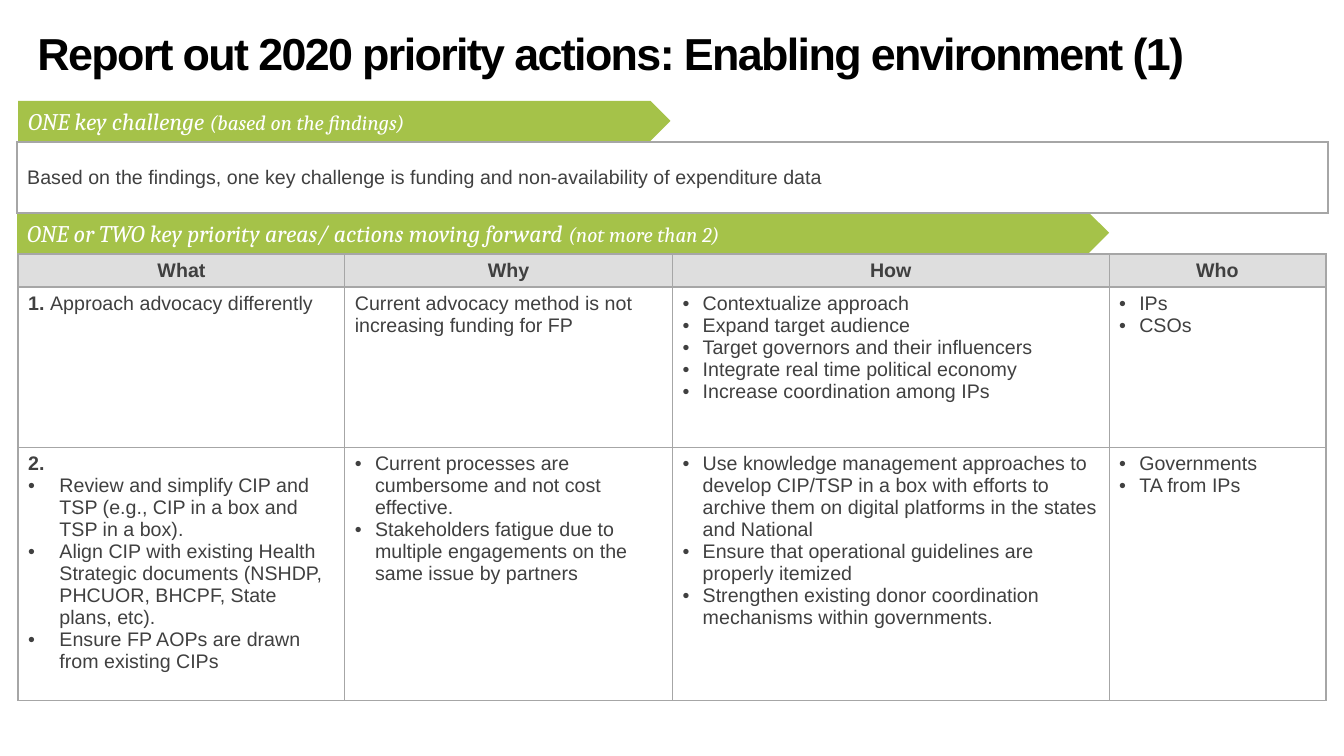
from dataclasses import dataclass

from lxml.etree import SubElement
from pptx import Presentation
from pptx.dml.color import RGBColor
from pptx.enum.shapes import MSO_SHAPE
from pptx.enum.text import MSO_ANCHOR, PP_ALIGN
from pptx.oxml.ns import qn
from pptx.util import Inches, Pt

COLORS = {"title": "000000", "text": "404040", "border": "A6A6A6",
          "header": "DEDEDE", "banner": "A5C249", "on_banner": "FFFFFF"}
THICK, THIN = 1.5, 0.75


@dataclass
class Line:
    """One paragraph: an optional bold lead, its text and a bullet indent."""
    text: str = ""
    lead: str = ""
    indent: float = 0


def bullets(*texts, indent=0.2):
    """Return bulleted lines that share one indent."""
    return [Line(text, indent=indent) for text in texts]


class ReportSlide:
    """Holds the style and the current slide and draws its elements."""

    def __init__(self, deck):
        self.slide = deck.slides.add_slide(deck.slide_layouts[5])

    def style(self, run, size, color="text", font="Arial", bold=False, italic=False):
        """Format one run."""
        run.font.size, run.font.name = Pt(size), font
        run.font.bold, run.font.italic = bold, italic
        run.font.color.rgb = RGBColor.from_string(COLORS[color])

    def title(self, text, left, top, width, height):
        """Place and format the title placeholder."""
        heading = self.slide.shapes.title
        heading.left, heading.top = Inches(left), Inches(top)
        heading.width, heading.height = Inches(width), Inches(height)
        frame = heading.text_frame
        frame.text = text
        frame.vertical_anchor = MSO_ANCHOR.MIDDLE
        paragraph = frame.paragraphs[0]
        paragraph.alignment, paragraph.line_spacing = PP_ALIGN.LEFT, 0.9
        self.style(paragraph.runs[0], 32, "title", bold=True)
        paragraph.runs[0].font._element.set("spc", "-120")

    def banner(self, heading, remark, left, top, width):
        """Draw a pointed banner with a heading and a smaller remark."""
        plate = self.slide.shapes.add_shape(
            MSO_SHAPE.PENTAGON, Inches(left), Inches(top), Inches(width), Inches(0.4))
        plate.shadow.inherit = False
        plate.fill.solid()
        plate.fill.fore_color.rgb = RGBColor.from_string(COLORS["banner"])
        plate.line.fill.background()
        plate.text_frame.vertical_anchor = MSO_ANCHOR.MIDDLE
        paragraph = plate.text_frame.paragraphs[0]
        paragraph.alignment = PP_ALIGN.LEFT
        for text, size in ((heading + " ", 17), (remark, 15)):
            run = paragraph.add_run()
            run.text = text
            self.style(run, size, "on_banner", "Cambria", italic=True)

    def table(self, left, top, widths, heights):
        """Add a plain table without a banded style."""
        grid = self.slide.shapes.add_table(
            len(heights), len(widths), Inches(left), Inches(top),
            Inches(sum(widths)), Inches(sum(heights))).table
        grid.first_row = grid.horz_banding = False
        for column, width in zip(grid.columns, widths):
            column.width = Inches(width)
        for row, height in zip(grid.rows, heights):
            row.height = Inches(height)
        return grid

    def cell(self, cell, lines, borders, header=False, middle=False):
        """Fill one cell; borders are left, right, top and bottom widths."""
        properties = cell._tc.get_or_add_tcPr()
        for side, width in zip("LRTB", borders):
            edge = SubElement(properties, qn(f"a:ln{side}"), w=str(Pt(width)))
            paint = SubElement(edge, qn("a:solidFill"))
            SubElement(paint, qn("a:srgbClr"), val=COLORS["border"])
        if header:
            cell.fill.solid()
            cell.fill.fore_color.rgb = RGBColor.from_string(COLORS["header"])
        else:
            cell.fill.background()
        cell.vertical_anchor = MSO_ANCHOR.MIDDLE if middle else MSO_ANCHOR.TOP
        for index, line in enumerate(lines):
            frame = cell.text_frame
            paragraph = frame.add_paragraph() if index else frame.paragraphs[0]
            paragraph.alignment = PP_ALIGN.CENTER if header else PP_ALIGN.LEFT
            for text, bold in ((line.lead, True), (line.text, False)):
                if text:
                    run = paragraph.add_run()
                    run.text = text
                    self.style(run, 14, bold=bold)
            if line.indent:
                layout = paragraph._p.get_or_add_pPr()
                layout.set("marL", str(Inches(line.indent)))
                layout.set("indent", str(-Inches(line.indent)))
                SubElement(layout, qn("a:buFont"), typeface="Arial")
                SubElement(layout, qn("a:buChar"), char="•")

    def action_table(self, rows, left, top, widths, heights):
        """Draw the table of actions with a heavier frame and header rule."""
        grid = self.table(left, top, widths, heights)
        last_row, last_column = len(heights) - 1, len(widths) - 1
        for r, row in enumerate(rows):
            for c, lines in enumerate(row):
                borders = (THICK if c == 0 else THIN,
                           THICK if c == last_column else THIN,
                           THICK if r <= 1 else THIN,
                           THICK if r in (0, last_row) else THIN)
                self.cell(grid.cell(r, c), lines, borders, header=r == 0, middle=r == 0)


def main():
    """Build the slide and save it."""
    deck = Presentation()
    deck.slide_width, deck.slide_height = Inches(13.33), Inches(7.5)
    report = ReportSlide(deck)
    report.title("Report out 2020 priority actions: Enabling environment (1)",
                 0.27, 0.23, 12.8, 0.65)

    headings = [[Line(lead=name)] for name in ("What", "Why", "How", "Who")]
    advocacy = [
        [Line("Approach advocacy differently", lead="1. ")],
        [Line("Current advocacy method is not increasing funding for FP")],
        bullets("Contextualize approach", "Expand target audience",
                "Target governors and their influencers",
                "Integrate real time political economy",
                "Increase coordination among IPs"),
        bullets("IPs", "CSOs"),
    ]
    planning = [
        [Line(lead="2.")] + bullets(
            "Review and simplify CIP and TSP (e.g., CIP in a box and TSP in a box).",
            "Align CIP with existing Health Strategic documents "
            "(NSHDP, PHCUOR, BHCPF, State plans, etc).",
            "Ensure FP AOPs are drawn from existing CIPs", indent=0.31),
        bullets("Current processes are cumbersome and not cost effective.",
                "Stakeholders fatigue due to multiple engagements "
                "on the same issue by partners"),
        bullets("Use knowledge management approaches to develop CIP/TSP in a box with "
                "efforts to archive them on digital platforms in the states and National",
                "Ensure that operational guidelines are properly itemized",
                "Strengthen existing donor coordination mechanisms within governments."),
        bullets("Governments", "TA from IPs"),
    ]
    report.action_table([headings, advocacy, planning], 0.18, 2.52,
                        (3.24, 3.25, 4.33, 2.15), (0.33, 1.59, 2.51))

    report.banner("ONE key challenge", "(based on the findings)", 0.18, 1, 6.47)
    report.banner("ONE or TWO key priority areas/ actions moving forward",
                  "(not more than 2)", 0.17, 2.11, 10.83)
    challenge = report.table(0.17, 1.41, (13,), (0.7,))
    report.cell(challenge.cell(0, 0),
                [Line("Based on the findings, one key challenge is funding and "
                      "non-availability of expenditure data")],
                (THICK,) * 4, middle=True)
    deck.save("out.pptx")


if __name__ == "__main__":
    main()
